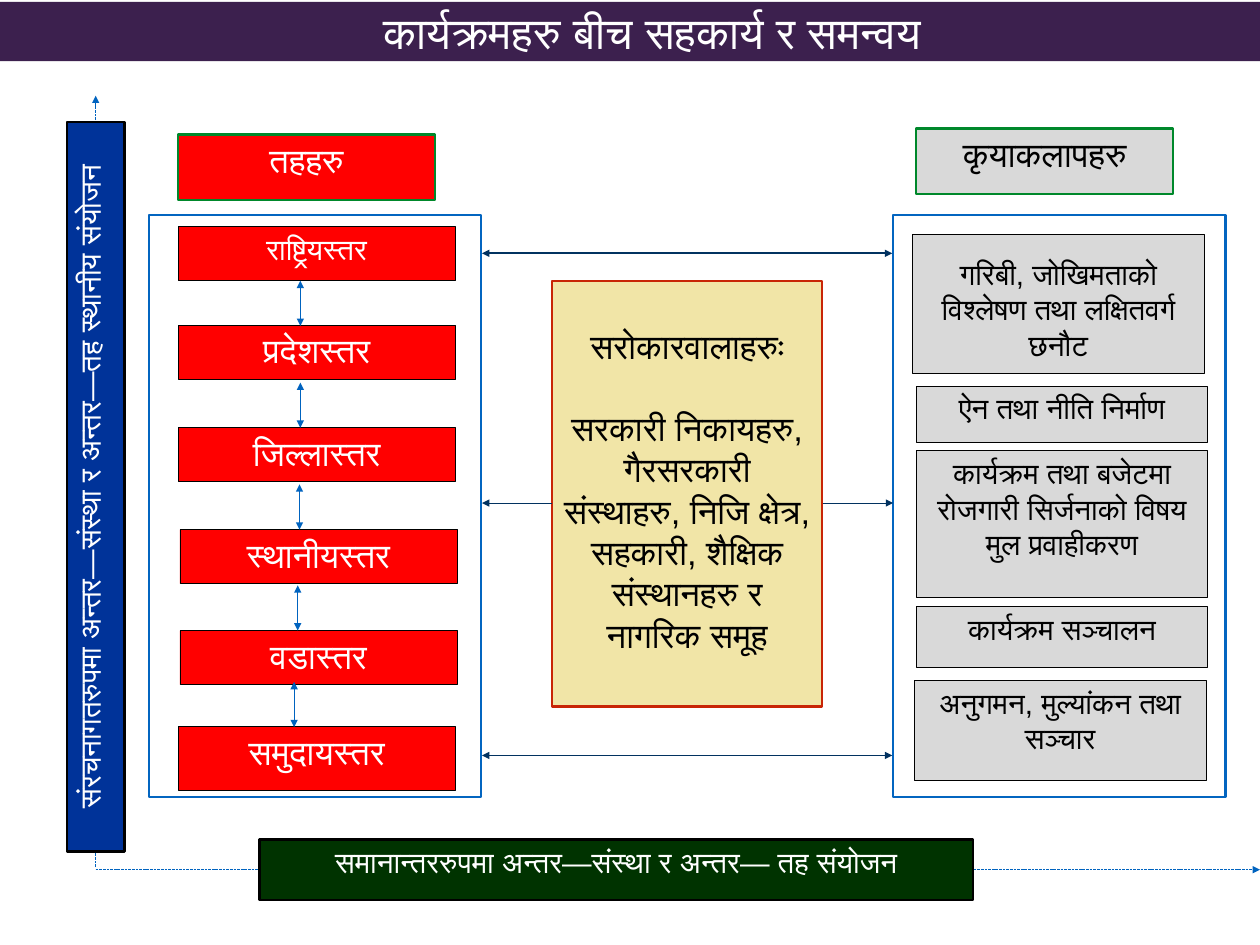
import pptx
import pptx.dml.color
import pptx.enum.dml
import pptx.enum.shapes
import pptx.enum.text
import pptx.oxml.ns
import pptx.util
from lxml import etree
from pptx.util import Inches

COLORS = {
    "purple": "3C204E", "white": "FFFFFF", "black": "000000",
    "red": "FF0000", "gray": "D9D9D9", "sand": "F1E5A7",
    "rust": "C82506", "green": "00882B", "dark green": "003300",
    "frame blue": "0365C0", "arrow blue": "0063BF",
    "navy": "013260", "bar blue": "003399",
}


def rgb(name):
    return pptx.dml.color.RGBColor.from_string(COLORS[name])


def write_text(shape, text, size=24, color="black", font="Arial", anchor="TOP",
               inset=0.05, gap=0):
    """Write one centred paragraph per line of text, gap points apart."""
    frame = shape.text_frame
    frame.word_wrap = True
    frame.auto_size = pptx.enum.text.MSO_AUTO_SIZE.NONE
    frame.vertical_anchor = pptx.enum.text.MSO_ANCHOR[anchor]
    frame.margin_top = Inches(inset)
    frame.text = text
    for index, paragraph in enumerate(frame.paragraphs):
        paragraph.alignment = pptx.enum.text.PP_ALIGN.CENTER
        paragraph.space_before = pptx.util.Pt(gap if index else 0)
        for run in paragraph.runs:
            run.font.size = pptx.util.Pt(size)
            run.font.name = font
            run.font.color.rgb = rgb(color)
            # Devanagari takes its typeface from the complex-script element
            etree.SubElement(run.font._element, pptx.oxml.ns.qn("a:cs"), typeface=font)


class SlideBuilder:
    def __init__(self, slide):
        self.slide = slide

    def title(self, text, left, top, width, height):
        shape = self.slide.shapes.title
        shape.left, shape.top = Inches(left), Inches(top)
        shape.width, shape.height = Inches(width), Inches(height)
        shape.fill.solid()
        shape.fill.fore_color.rgb = rgb("purple")
        write_text(shape, text, size=36, color="white", anchor="MIDDLE", inset=0.03)
        frame = shape.text_frame
        frame.margin_left = frame.margin_right = frame.margin_bottom = Inches(0.03)
        properties = frame.paragraphs[0]._p.get_or_add_pPr()
        properties.set("indent", str(Inches(0.5)))

    def box(self, left, top, width, height, fill="white", line="black",
            line_width=0.5, rotation=0, text="", **text_format):
        shape = self.slide.shapes.add_shape(
            pptx.enum.shapes.MSO_SHAPE.RECTANGLE,
            Inches(left), Inches(top), Inches(width), Inches(height))
        shape.shadow.inherit = False
        shape.rotation = rotation
        shape.fill.solid()
        shape.fill.fore_color.rgb = rgb(fill)
        shape.line.color.rgb = rgb(line)
        shape.line.width = pptx.util.Pt(line_width)
        if text:
            write_text(shape, text, **text_format)

    def arrow(self, start, end, color="arrow blue", width=0.75, both=False, dashed=False):
        connector = self.slide.shapes.add_connector(
            pptx.enum.shapes.MSO_CONNECTOR.STRAIGHT,
            *(Inches(value) for value in (*start, *end)))
        connector.line.color.rgb = rgb(color)
        connector.line.width = pptx.util.Pt(width)
        if dashed:
            connector.line.dash_style = pptx.enum.dml.MSO_LINE.SQUARE_DOT
        outline = connector.line._get_or_add_ln()
        for tag in ("a:headEnd", "a:tailEnd") if both else ("a:tailEnd",):
            etree.SubElement(outline, pptx.oxml.ns.qn(tag), type="triangle")
        etree.SubElement(connector._element.spPr, pptx.oxml.ns.qn("a:effectLst"))


def main():
    presentation = pptx.Presentation()
    presentation.slide_width = Inches(14.22)
    presentation.slide_height = Inches(10.67)
    slide = presentation.slides.add_slide(presentation.slide_layouts[5])
    builder = SlideBuilder(slide)
    builder.title("कार्यक्रमहरु बीच सहकार्य र समन्वय", 0, 0.02, 14.22, 0.67)

    # Frames of the two columns
    for left in (1.68, 10.08):
        builder.box(left, 2.43, 3.75, 6.57, line="frame blue", line_width=2)

    # Levels
    levels = [
        ("राष्ट्रियस्तर", 2.01, 2.56, 0.61, 24),
        ("प्रदेशस्तर", 2.01, 3.67, 0.61, 28),
        ("जिल्लास्तर", 2.01, 4.83, 0.61, 28),
        ("स्थानीयस्तर", 2.03, 5.98, 0.61, 28),
        ("वडास्तर", 2.03, 7.12, 0.61, 28),
        ("समुदायस्तर", 2.01, 8.2, 0.72, 28),
    ]
    for text, left, top, height, size in levels:
        builder.box(left, top, 3.13, height, fill="red", text=text, size=size, color="white")

    # Stakeholders
    builder.box(6.23, 3.17, 3.05, 4.81, fill="sand", line="rust", line_width=2,
                text="सरोकारवालाहरुः\nसरकारी निकायहरु, गैरसरकारी संस्थाहरु, निजि क्षेत्र, "
                     "सहकारी, शैक्षिक संस्थानहरु र नागरिक समूह",
                size=28, inset=0.5, gap=33)

    # Arrows between levels
    for x, top in ((3.39, 3.17), (3.39, 4.32), (3.38, 5.47), (3.36, 6.61), (3.32, 7.7)):
        builder.arrow((x, top), (x, top + 0.51), both=True)

    # Axes
    builder.arrow((1.08, 9.79), (1.08, 1.08), dashed=True)
    builder.arrow((1.08, 9.82), (14.22, 9.82), dashed=True)

    # Activities
    activities = [
        ("गरिबी, जोखिमताको विश्लेषण तथा लक्षितवर्ग छनौट", 10.3, 2.65, 1.57, 0.24),
        ("ऐन तथा नीति निर्माण", 10.34, 4.36, 0.63, 0.05),
        ("कार्यक्रम तथा बजेटमा रोजगारी सिर्जनाको विषय मुल प्रवाहीकरण", 10.34, 5.09, 1.66, 0.05),
        ("कार्यक्रम सञ्चालन", 10.34, 6.85, 0.68, 0.05),
        ("अनुगमन, मुल्यांकन तथा सञ्चार", 10.32, 7.68, 1.13, 0.05),
    ]
    for text, left, top, height, inset in activities:
        builder.box(left, top, 3.29, height, fill="gray", text=text, inset=inset)

    # Arrows between columns
    for y in (2.86, 8.53):
        builder.arrow((5.44, y), (10.07, y), color="navy", width=1.5, both=True)
    for start, end in ((6.23, 5.44), (9.29, 10.08)):
        builder.arrow((start, 5.68), (end, 5.68), color="navy")

    # Column headings
    builder.box(2.01, 1.52, 2.9, 0.74, fill="red", line="green", line_width=2,
                text="तहहरु", size=28, color="white")
    builder.box(10.34, 1.45, 2.9, 0.74, fill="gray", line="green", line_width=2,
                text="कृयाकलापहरु", size=28)

    # Axis labels
    builder.box(2.93, 9.48, 8.05, 0.68, fill="dark green", line_width=2,
                text="समानान्तररुपमा अन्तर—संस्था र अन्तर— तह संयोजन", color="white")
    builder.box(-3.04, 5.17, 8.24, 0.65, fill="bar blue", line_width=2, rotation=270,
                text="संरचनागतरुपमा अन्तर—संस्था र अन्तर—तह स्थानीय संयोजन", color="white")

    presentation.save("out.pptx")


if __name__ == "__main__":
    main()
